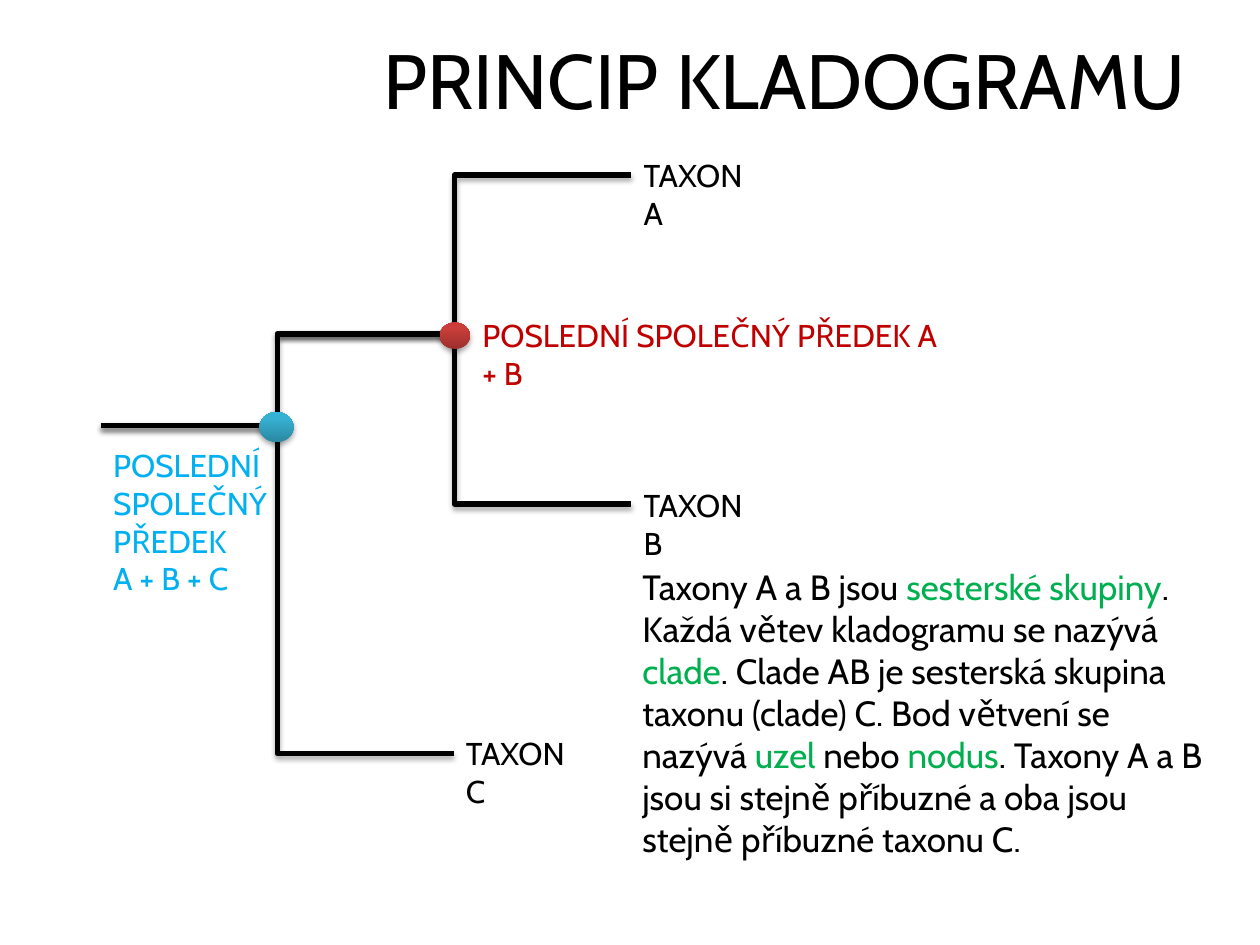
"""Build a slide explaining the principle of a cladogram."""
import copy

import pptx
import pptx.dml.color
import pptx.enum.shapes
import pptx.enum.text
import pptx.oxml
import pptx.oxml.ns
import pptx.util

Inches = pptx.util.Inches
Pt = pptx.util.Pt


def color(value):
    return pptx.dml.color.RGBColor.from_string(value)


class Cladogram:
    font = "Cabin"
    black = "000000"
    green = "00B050"

    def __init__(self, prs):
        self.s = prs.slides.add_slide(prs.slide_layouts[5])

    def format(self, r, size, fill):
        r.font.name = self.font
        r.font.size = Pt(size)
        r.font.color.rgb = color(fill)

    def title(self, text, x, y, w, h):
        sp = self.s.shapes.title
        sp.left, sp.top, sp.width, sp.height = map(Inches, (x, y, w, h))
        tf = sp.text_frame
        tf.text = text
        tf.vertical_anchor = pptx.enum.text.MSO_ANCHOR.MIDDLE
        p = tf.paragraphs[0]
        p.alignment = pptx.enum.text.PP_ALIGN.RIGHT
        self.format(p.runs[0], 44, self.black)

    def text_box(self, x, y, w, h):
        tf = self.s.shapes.add_textbox(*map(Inches, (x, y, w, h))).text_frame
        tf.word_wrap = True
        tf.auto_size = pptx.enum.text.MSO_AUTO_SIZE.SHAPE_TO_FIT_TEXT
        return tf

    def label(self, text, x, y, w, h=0.4, fill=black):
        tf = self.text_box(x, y, w, h)
        tf.text = text
        for p in tf.paragraphs:
            self.format(p.runs[0], 18, fill)

    def explanation(self, parts, x, y, w, h):
        p = self.text_box(x, y, w, h).paragraphs[0]
        for i, part in enumerate(parts):
            r = p.add_run()
            r.text = part
            self.format(r, 20, self.green if i % 2 else self.black)

    def shadow(self, sp):
        sp._element.spPr.append(pptx.oxml.parse_xml(
            f'<a:effectLst {pptx.oxml.ns.nsdecls("a")}>'
            '<a:outerShdw blurRad="40000" dist="23000" dir="5400000" rotWithShape="0">'
            '<a:srgbClr val="000000"><a:alpha val="35000"/></a:srgbClr>'
            '</a:outerShdw></a:effectLst>'))

    def branch(self, start, end):
        sp = self.s.shapes.add_connector(
            pptx.enum.shapes.MSO_CONNECTOR.ELBOW, *map(Inches, start + end))
        sp.line.color.rgb = color(self.black)
        sp.line.width = Pt(3)
        self.shadow(sp)

    def node(self, x, y, w, h, fills):
        sp = self.s.shapes.add_shape(
            pptx.enum.shapes.MSO_SHAPE.OVAL, *map(Inches, (x, y, w, h)))
        sp.fill.gradient()
        sp.fill.gradient_angle = 90
        stops = sp._element.spPr.find(".//" + pptx.oxml.ns.qn("a:gsLst"))
        stops.append(copy.deepcopy(stops[-1]))
        for stop, position, fill in zip(sp.fill.gradient_stops, (0, 0.8, 1), fills):
            stop.position = position
            stop.color.rgb = color(fill)
        sp.line.fill.background()
        self.shadow(sp)


def main():
    prs = pptx.Presentation()
    prs.slide_width, prs.slide_height = Inches(10), Inches(7.5)
    c = Cladogram(prs)
    c.title("PRINCIP KLADOGRAMU", 0.51, 0, 9, 1.25)

    root, inner = (0.8, 3.38), (2.2, 2.65)
    c.branch(root, (3.6, 5.98))
    c.branch(root, (3.6, 2.65))
    c.branch(inner, (5.01, 4))
    c.branch(inner, (5.01, 1.39))

    c.label("TAXON A", 5.01, 1.19, 1.15)
    c.label("TAXON B", 5.01, 3.81, 1.13)
    c.label("TAXON C", 3.6, 5.78, 1.14)

    c.node(3.49, 2.56, 0.24, 0.21, ("9C2F2D", "CB3E3A", "CE3B37"))
    c.label("POSLEDNÍ SPOLEČNÝ PŘEDEK A + B", 3.73, 2.46, 3.94, fill="C00000")
    c.node(2.06, 3.27, 0.27, 0.24, ("2A88A2", "37B1D2", "34B4D6"))
    c.label("POSLEDNÍ SPOLEČNÝ PŘEDEK\nA + B + C", 0.8, 3.49, 1.8, 1.31, "00B0F0")

    c.explanation((
        "Taxony A a B jsou ", "sesterské skupiny",
        ". Každá větev kladogramu se nazývá ", "clade",
        ". Clade AB je sesterská skupina taxonu (clade) C. Bod větvení se nazývá ",
        "uzel", " nebo ", "nodus",
        ". Taxony A a B jsou si stejně příbuzné a oba jsou stejně příbuzné taxonu C.",
    ), 5, 4.44, 4.73, 2.46)
    prs.save("out.pptx")


if __name__ == "__main__":
    main()
